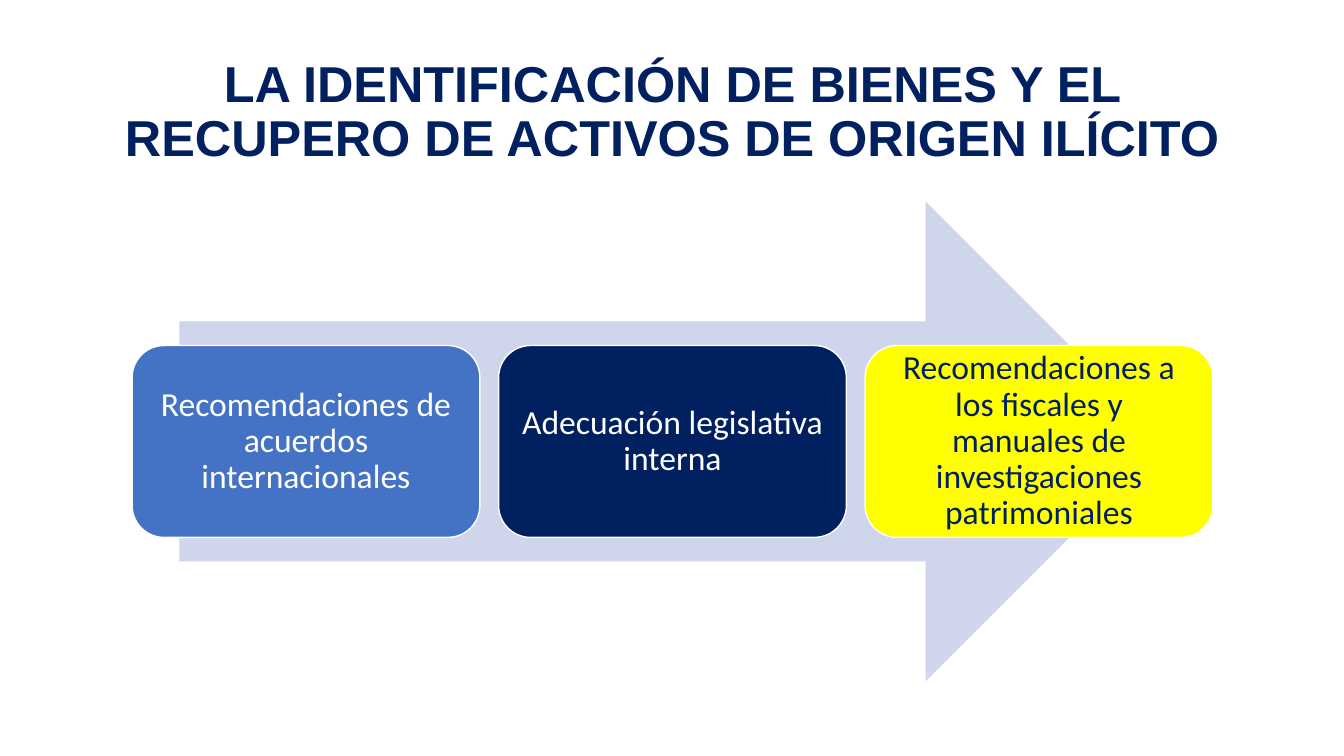
from pptx import Presentation
from pptx.dml.color import RGBColor
from pptx.enum.shapes import MSO_SHAPE
from pptx.enum.text import MSO_ANCHOR, MSO_AUTO_SIZE, PP_ALIGN
from pptx.util import Inches, Pt

NAVY = "002060"
WHITE = "FFFFFF"
STAGES = [
    ("Recomendaciones de acuerdos internacionales", "4472C4", WHITE),
    ("Adecuación legislativa interna", NAVY, WHITE),
    ("Recomendaciones a los fiscales y manuales de investigaciones patrimoniales", "FFFF00", NAVY),
]


def rgb(value):
    """Turn a hex string into a colour."""
    return RGBColor.from_string(value)


def write_centred(frame, wording, font_name, size, color, bold=False):
    """Fill a text frame with one centred paragraph."""
    frame.word_wrap = True
    frame.auto_size = MSO_AUTO_SIZE.NONE
    frame.vertical_anchor = MSO_ANCHOR.MIDDLE
    paragraph = frame.paragraphs[0]
    paragraph.text = wording
    paragraph.alignment = PP_ALIGN.CENTER
    paragraph.line_spacing = 0.9
    paragraph.font.name = font_name
    paragraph.font.size = Pt(size)
    paragraph.font.bold = bold
    paragraph.font.color.rgb = rgb(color)


def place_title(slide, left, top, width, height):
    """Place the heading in the title placeholder."""
    title = slide.shapes.title
    title.left, title.top = Inches(left), Inches(top)
    title.width, title.height = Inches(width), Inches(height)
    write_centred(title.text_frame,
                  "LA IDENTIFICACIÓN DE BIENES Y EL RECUPERO DE ACTIVOS DE ORIGEN ILÍCITO",
                  "Arial", 36, NAVY, bold=True)


def add_filled(slide, preset, left, top, width, height, fill):
    """Add a flat preset shape with a solid fill and no shadow."""
    shape = slide.shapes.add_shape(preset, Inches(left), Inches(top), Inches(width), Inches(height))
    shape.shadow.inherit = False
    shape.fill.solid()
    shape.fill.fore_color.rgb = rgb(fill)
    return shape


def add_stage(slide, left, top, width, height, wording, fill, color):
    """Add one rounded card of the process."""
    card = add_filled(slide, MSO_SHAPE.ROUNDED_RECTANGLE, left, top, width, height, fill)
    card.line.color.rgb = rgb(WHITE)
    card.line.width = Pt(1)
    frame = card.text_frame
    frame.margin_left = frame.margin_right = Inches(0.13)
    frame.margin_top = frame.margin_bottom = Inches(0.13)
    write_centred(frame, wording, "Calibri", 24, color)


def add_process(slide, left, top, width, height):
    """Draw the arrow and spread the stage cards over it."""
    arrow_inset = 0.47
    arrow = add_filled(slide, MSO_SHAPE.RIGHT_ARROW, left + arrow_inset, top,
                       width - 2 * arrow_inset, height, "CFD5EA")
    arrow.line.fill.background()
    card_width = 3.45
    pitch = (width - card_width) / (len(STAGES) - 1)
    for index, stage in enumerate(STAGES):
        add_stage(slide, left + index * pitch, top + 0.3 * height,
                  card_width, 0.4 * height, *stage)


def main():
    """Build and save the slide."""
    deck = Presentation()
    deck.slide_width, deck.slide_height = Inches(13.33), Inches(7.5)
    slide = deck.slides.add_slide(deck.slide_layouts[5])
    place_title(slide, 0.92, 0.4, 11.5, 1.45)
    add_process(slide, 1.31, 2, 10.72, 4.76)
    deck.save("out.pptx")


if __name__ == "__main__":
    main()
